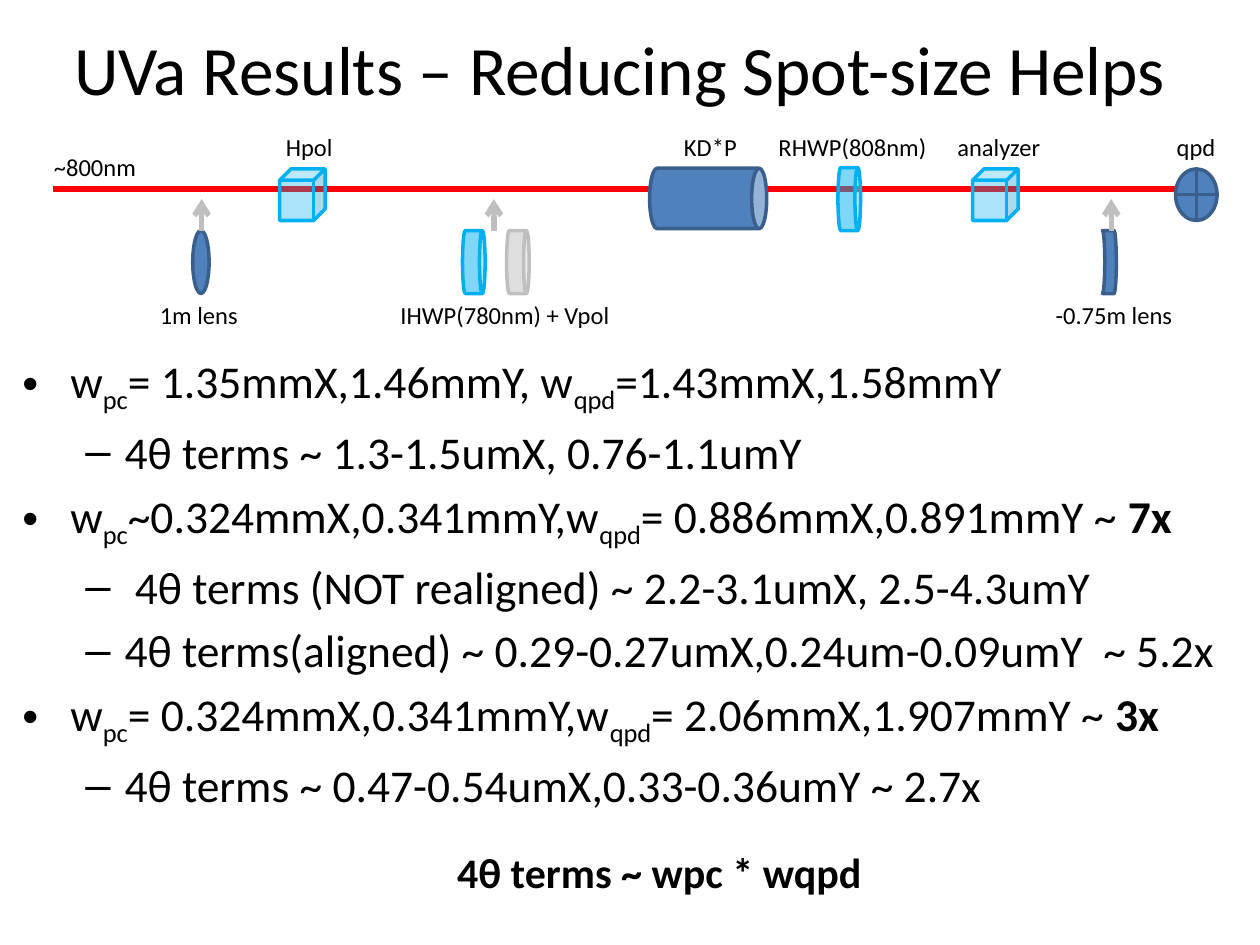
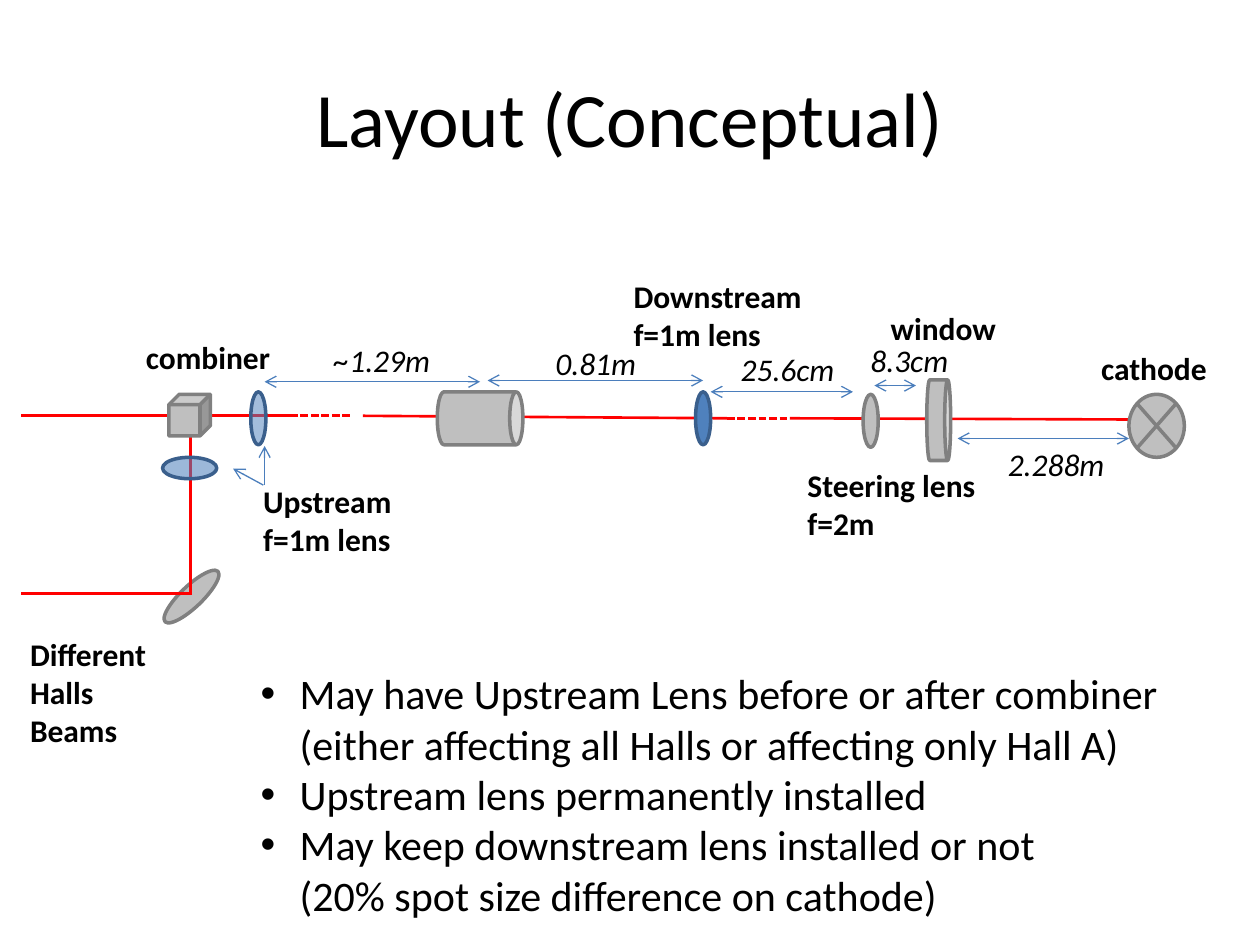
"""Build two slides on laser spot size and the conceptual beam layout."""
from lxml.etree import SubElement
from pptx import Presentation
from pptx.dml.color import RGBColor
from pptx.enum.dml import MSO_LINE
from pptx.enum.shapes import MSO_CONNECTOR, MSO_SHAPE
from pptx.enum.text import MSO_ANCHOR, MSO_AUTO_SIZE, PP_ALIGN
from pptx.oxml.ns import qn
from pptx.util import Emu, Pt

SCALE = 9144
FONT = "Calibri"
BLACK = RGBColor(0x00, 0x00, 0x00)
RED = RGBColor(0xFF, 0x00, 0x00)
CYAN = RGBColor(0x00, 0xB0, 0xF0)
BLUE = RGBColor(0x4F, 0x81, 0xBD)
NAVY = RGBColor(0x3A, 0x5F, 0x8C)
STEEL = RGBColor(0x4B, 0x7E, 0xBC)
SILVER = RGBColor(0xBF, 0xBF, 0xBF)
GRAY = RGBColor(0x80, 0x80, 0x80)

GLASS = {"fill": BLUE, "edge": NAVY}
METAL = {"fill": SILVER, "edge": GRAY}
CLEAR = {"fill": CYAN, "edge": CYAN}
FROST = {"fill": SILVER, "edge": SILVER}

NOTES = [
    (0, "w|_pc|= 1.35mmX,1.46mmY, w|_qpd|=1.43mmX,1.58mmY"),
    (1, "4θ terms ~ 1.3-1.5umX, 0.76-1.1umY"),
    (0, "w|_pc|~0.324mmX,0.341mmY,w|_qpd|= 0.886mmX,0.891mmY ~ |*7x"),
    (1, " 4θ terms (NOT realigned) ~ 2.2-3.1umX, 2.5-4.3umY"),
    (1, "4θ terms(aligned) ~ 0.29-0.27umX,0.24um-0.09umY  ~ 5.2x"),
    (0, "w|_pc|= 0.324mmX,0.341mmY,w|_qpd|= 2.06mmX,1.907mmY ~ |*3x"),
    (1, "4θ terms ~ 0.47-0.54umX,0.33-0.36umY ~ 2.7x"),
]
POINTS = [
    "May have Upstream Lens before or after combiner "
    "(either affecting all Halls or affecting only Hall A)",
    "Upstream lens permanently installed",
    "May keep downstream lens installed or not",
]


def px(*nums):
    return [Emu(num * SCALE) for num in nums]


def put(thing, **vals):
    for name, val in vals.items():
        setattr(thing, name, val)


class Deck:
    """Hold the style and the current slide."""

    def __init__(self):
        self.file = Presentation()
        wide, high = px(1000, 750)
        put(self.file, slide_width=wide, slide_height=high)
        self.slide = None

    def title(self, text, box, size):
        self.slide = self.file.slides.add_slide(self.file.slide_layouts[5])
        head = self.slide.shapes.title
        put(head, **dict(zip(("left", "top", "width", "height"), px(*box))))
        put(head.text_frame, vertical_anchor=MSO_ANCHOR.MIDDLE, word_wrap=True)
        para = head.text_frame.paragraphs[0]
        para.alignment = PP_ALIGN.CENTER
        self.words(para, text, size=size)

    def words(self, para, text, size, **style):
        for bit in text.split("|"):
            run = para.add_run()
            run.text = bit.lstrip("_*")
            put(run.font, name=FONT, size=Pt(size), **style)
            run.font.color.rgb = BLACK
            if bit.startswith("_"):
                run._r.get_or_add_rPr().set("baseline", "-25000")
            elif bit.startswith("*"):
                run.font.bold = True

    def frame(self, box, wrap=True, grow=True):
        frame = self.slide.shapes.add_textbox(*px(*box)).text_frame
        fit = MSO_AUTO_SIZE.SHAPE_TO_FIT_TEXT if grow else MSO_AUTO_SIZE.NONE
        put(frame, word_wrap=wrap, auto_size=fit)
        return frame

    def label(self, text, box, size=18, wrap=True, **style):
        frame = self.frame(box, wrap)
        for num, line in enumerate(text.split("\n")):
            para = frame.add_paragraph() if num else frame.paragraphs[0]
            self.words(para, line, size, **style)

    def bullets(self, rows, box, size, gap=0, grow=True):
        frame = self.frame(box, grow=grow)
        for num, (level, left, hang, mark, text) in enumerate(rows):
            para = frame.add_paragraph() if num else frame.paragraphs[0]
            put(para, level=level, space_before=Pt(gap))
            props = para._p.get_or_add_pPr()
            for key, val in {"marL": left, "indent": -hang}.items():
                props.set(key, str(val * SCALE))
            if mark:
                SubElement(props, qn("a:buFont"), typeface="Arial")
                SubElement(props, qn("a:buChar"), char=mark)
            self.words(para, text, size)

    def shape(self, kind, box, fill, edge, alpha=None, turn=0, flip=False):
        item = self.slide.shapes.add_shape(kind, *px(*box))
        put(item, rotation=turn)
        item.shadow.inherit = False
        item.fill.solid()
        item.fill.fore_color.rgb = fill
        item.line.color.rgb = edge
        item.line.width = Pt(2)
        props = item._element.spPr
        if alpha:
            tint = props.find(qn("a:solidFill")).find(qn("a:srgbClr"))
            SubElement(tint, qn("a:alpha"), val=str(alpha * 1000))
        if flip:
            props.get_or_add_xfrm().set("flipH", "1")

    def line(self, ends, color=RED, width=1.5, dash=None, tips=()):
        item = self.slide.shapes.add_connector(MSO_CONNECTOR.STRAIGHT, *px(*ends))
        item.line.color.rgb = color
        put(item.line, width=Pt(width), dash_style=dash)
        props = item._element.spPr
        for tip in tips:
            SubElement(props.find(qn("a:ln")), qn("a:" + tip), type="arrow")
        SubElement(props, qn("a:effectLst"))


def results(deck):
    deck.title("UVa Results – Reducing Spot-size Helps", (42, -9, 900, 125), 39.6)
    forms = [(38, 38, "•"), (81, 31, "–")]
    rows = [(level, *forms[level], text) for level, text in NOTES]
    deck.bullets(rows, (8, 275, 992, 395), 26, gap=5.2, grow=False)

    for text, left, top, wide in [
        ("~800nm", 33, 116, 86), ("Hpol", 217, 100, 58),
        ("IHWP(780nm) + Vpol", 308, 233, 187), ("KD*P", 533, 100, 62),
        ("qpd", 924, 100, 51), ("1m lens", 117, 233, 83),
        ("-0.75m lens", 828, 233, 113), ("RHWP(808nm)", 608, 100, 139),
        ("analyzer", 750, 100, 87),
    ]:
        deck.label(text, (left, top, wide, 34), 14, wrap=False)

    deck.line((42, 150, 958, 150), width=3)
    for left in (222, 772):
        deck.shape(MSO_SHAPE.CUBE, (left, 134, 36, 41), alpha=33, **CLEAR)
    deck.shape(MSO_SHAPE.CAN, (538, 111, 48, 93), turn=90, **GLASS)
    for left, top, look in [(649, 149, CLEAR), (351, 199, CLEAR), (386, 199, FROST)]:
        deck.shape(MSO_SHAPE.CAN, (left, top, 50, 18), alpha=50, turn=90, **look)
    deck.shape(MSO_SHAPE.FLOWCHART_OR, (933, 134, 33, 41), **GLASS)
    deck.shape(MSO_SHAPE.OVAL, (153, 183, 13, 50), **GLASS)
    deck.shape(MSO_SHAPE.FLOWCHART_STORED_DATA, (875, 183, 11, 50), flip=True, **GLASS)
    for left in (160, 392, 882):
        deck.line((left, 183, left, 158), SILVER, 3, tips=["tailEnd"])
    deck.label("4θ terms ~ wpc * wqpd", (353, 667, 344, 50), 24, wrap=False, bold=True)


def layout(deck):
    deck.title("Layout (Conceptual)", (50, 30, 900, 125), 44)
    deck.shape(MSO_SHAPE.OVAL, (123, 465, 58, 17), turn=136.4, **METAL)
    for ends in [(17, 330, 151, 330), (151, 330, 151, 472), (17, 471, 151, 471),
                 (167, 330, 230, 330), (288, 330, 577, 332), (627, 332, 916, 333)]:
        deck.line(ends)
    for left, top in [(230, 330), (577, 332)]:
        deck.line((left, top, left + 48, top), dash=MSO_LINE.SQUARE_DOT)

    deck.shape(MSO_SHAPE.CUBE, (134, 313, 33, 33), **METAL)
    for box in [(360, 298, 42, 68), (713, 324, 64, 19)]:
        deck.shape(MSO_SHAPE.CAN, box, turn=90, **METAL)
    deck.shape(MSO_SHAPE.OVAL, (199, 311, 12, 42), alpha=52, **GLASS)
    deck.shape(MSO_SHAPE.OVAL, (142, 350, 17, 43), alpha=56, turn=90, **GLASS)
    deck.shape(MSO_SHAPE.OVAL, (552, 311, 12, 42), **GLASS)
    deck.shape(MSO_SHAPE.OVAL, (685, 313, 12, 42), **METAL)
    deck.shape(MSO_SHAPE.FLOWCHART_SUMMING_JUNCTION, (896, 313, 44, 50), **METAL)

    for text, *box in [
        ("Different Halls Beams", 14, 499, 136, 101),
        ("combiner", 106, 263, 132, 40),
        ("Upstream f=1m lens", 199, 378, 132, 71),
        ("Downstream f=1m lens", 493, 215, 167, 71),
        ("Steering lens\nf=2m", 631, 365, 167, 71),
        ("window", 697, 240, 167, 40),
        ("cathode", 864, 272, 121, 40),
    ]:
        deck.label(text, box, bold=True)
    for ends in [(210, 385, 210, 354), (209, 385, 185, 372)]:
        deck.line(ends, STEEL, 0.75, tips=["tailEnd"])
    for text, left, top, start, end, row in [
        ("~1.29m", 255, 266, 210, 381, 303), ("0.81m", 431, 268, 387, 558, 302),
        ("25.6cm", 578, 273, 564, 677, 311), ("8.3cm", 681, 266, 694, 727, 306),
        ("2.288m", 790, 348, 760, 896, 348),
    ]:
        deck.line((start, row, end, row), STEEL, 0.75, tips=["headEnd", "tailEnd"])
        deck.label(text, (left, top, 127, 40), italic=True)

    rows = [(0, 31, 31, "•", text) for text in POINTS]
    rows.append((0, 31, 0, None, "(20% spot size difference on cathode)"))
    deck.bullets(rows, (197, 525, 761, 212), 24)


def main():
    deck = Deck()
    results(deck)
    layout(deck)
    deck.file.save("out.pptx")


if __name__ == "__main__":
    main()
